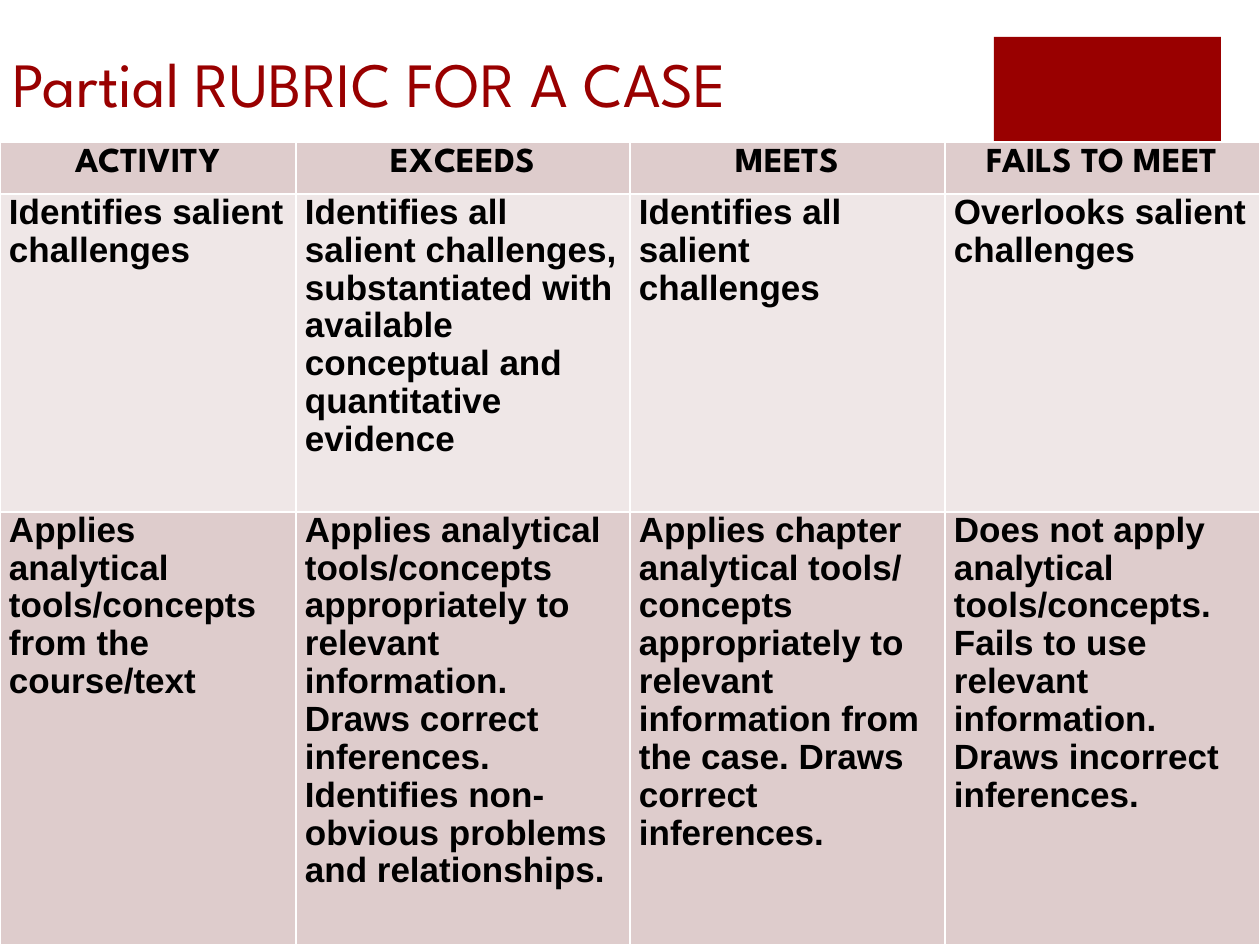
from dataclasses import dataclass

from lxml import etree
from pptx import Presentation
from pptx import util as u
from pptx.dml.color import RGBColor
from pptx.enum import shapes, text
from pptx.oxml import ns

EMU_PER_PX = 914400 / 126
CRIMSON = RGBColor(0x99, 0x00, 0x00)
BLACK = RGBColor(0x00, 0x00, 0x00)
WHITE = RGBColor(0xFF, 0xFF, 0xFF)
ROSE = RGBColor(0xDE, 0xCC, 0xCC)
PALE_ROSE = RGBColor(0xEF, 0xE7, 0xE7)
DISPLAY_FONT = "League Spartan"
BODY_FONT = "Arial"


@dataclass(frozen=True)
class Criterion:
    height: int
    fill: RGBColor
    entries: tuple[str, ...]
    font: str = BODY_FONT
    align: text.PP_ALIGN = text.PP_ALIGN.LEFT
    inset_x: int = 9
    inset_y: int = 0
    spacing: float = 0.97


COLUMN_WIDTHS = (296, 334, 315, 315)
RUBRIC = (
    Criterion(
        52, ROSE, ("ACTIVITY", "EXCEEDS", "MEETS", "FAILS TO MEET"),
        font=DISPLAY_FONT, align=text.PP_ALIGN.CENTER,
        inset_x=13, inset_y=6, spacing=1.0,
    ),
    Criterion(318, PALE_ROSE, (
        "Identifies salient challenges",
        "Identifies all salient challenges, substantiated with available "
        "conceptual and quantitative evidence",
        "Identifies all salient challenges",
        "Overlooks salient challenges",
    )),
    Criterion(433, ROSE, (
        "Applies analytical tools/concepts from the course/text",
        "Applies analytical tools/concepts appropriately to relevant information. "
        "Draws correct inferences. Identifies non-obvious problems and relationships.",
        "Applies chapter analytical tools/ concepts appropriately to relevant "
        "information from the case. Draws correct inferences.",
        "Does not apply analytical tools/concepts. Fails to use relevant "
        "information. Draws incorrect inferences.",
    )),
)


def px(length: int) -> u.Emu:
    return u.Emu(round(length * EMU_PER_PX))


def write(frame, wording: str, *, font: str, size: int, color: RGBColor,
          bold: bool = False, align=text.PP_ALIGN.LEFT, spacing: float = 1.0) -> None:
    paragraph = frame.paragraphs[0]
    paragraph.alignment = align
    paragraph.line_spacing = spacing
    run = paragraph.add_run()
    run.text = wording
    run.font.name = font
    run.font.size = u.Pt(size)
    run.font.bold = bold
    run.font.color.rgb = color


def outline_cell(cell, color: RGBColor, width: int) -> None:
    properties = cell._tc.get_or_add_tcPr()
    for side in ("lnL", "lnR", "lnT", "lnB"):
        line = etree.SubElement(properties, ns.qn(f"a:{side}"), w=str(u.Pt(width)))
        solid = etree.SubElement(line, ns.qn("a:solidFill"))
        etree.SubElement(solid, ns.qn("a:srgbClr"), val=str(color))


def fill_cell(cell, wording: str, criterion: Criterion) -> None:
    outline_cell(cell, WHITE, 1)
    cell.fill.solid()
    cell.fill.fore_color.rgb = criterion.fill
    cell.margin_left = cell.margin_right = px(criterion.inset_x)
    cell.margin_top = cell.margin_bottom = px(criterion.inset_y)
    write(cell.text_frame, wording, font=criterion.font, size=20, color=BLACK,
          bold=True, align=criterion.align, spacing=criterion.spacing)


def add_accent(slide) -> None:
    accent = slide.shapes.add_shape(
        shapes.MSO_SHAPE.RECTANGLE, px(994), px(37), px(227), px(227))
    accent.shadow.inherit = False
    accent.fill.solid()
    accent.fill.fore_color.rgb = CRIMSON
    accent.line.fill.background()
    slide.shapes._spTree.insert(2, accent._element)


def add_heading(slide) -> None:
    heading = slide.shapes.title
    heading.left, heading.top = px(0), px(38)
    heading.width, heading.height = px(1176), px(88)
    frame = heading.text_frame
    frame.word_wrap = True
    frame.auto_size = text.MSO_AUTO_SIZE.NONE
    frame.vertical_anchor = text.MSO_ANCHOR.BOTTOM
    write(frame, "Partial RUBRIC FOR A CASE", font=DISPLAY_FONT, size=36, color=CRIMSON)


def add_rubric(slide) -> None:
    rubric = slide.shapes.add_table(
        len(RUBRIC), len(COLUMN_WIDTHS), px(0), px(142),
        px(sum(COLUMN_WIDTHS)), px(sum(row.height for row in RUBRIC))).table
    for column, width in zip(rubric.columns, COLUMN_WIDTHS):
        column.width = px(width)
    for row, criterion in zip(rubric.rows, RUBRIC):
        row.height = px(criterion.height)
        for cell, wording in zip(row.cells, criterion.entries):
            fill_cell(cell, wording, criterion)


def main() -> None:
    deck = Presentation()
    deck.slide_width, deck.slide_height = px(1260), px(945)
    slide = deck.slides.add_slide(deck.slide_layouts[5])
    add_accent(slide)
    add_heading(slide)
    add_rubric(slide)
    deck.save("out.pptx")


if __name__ == "__main__":
    main()
